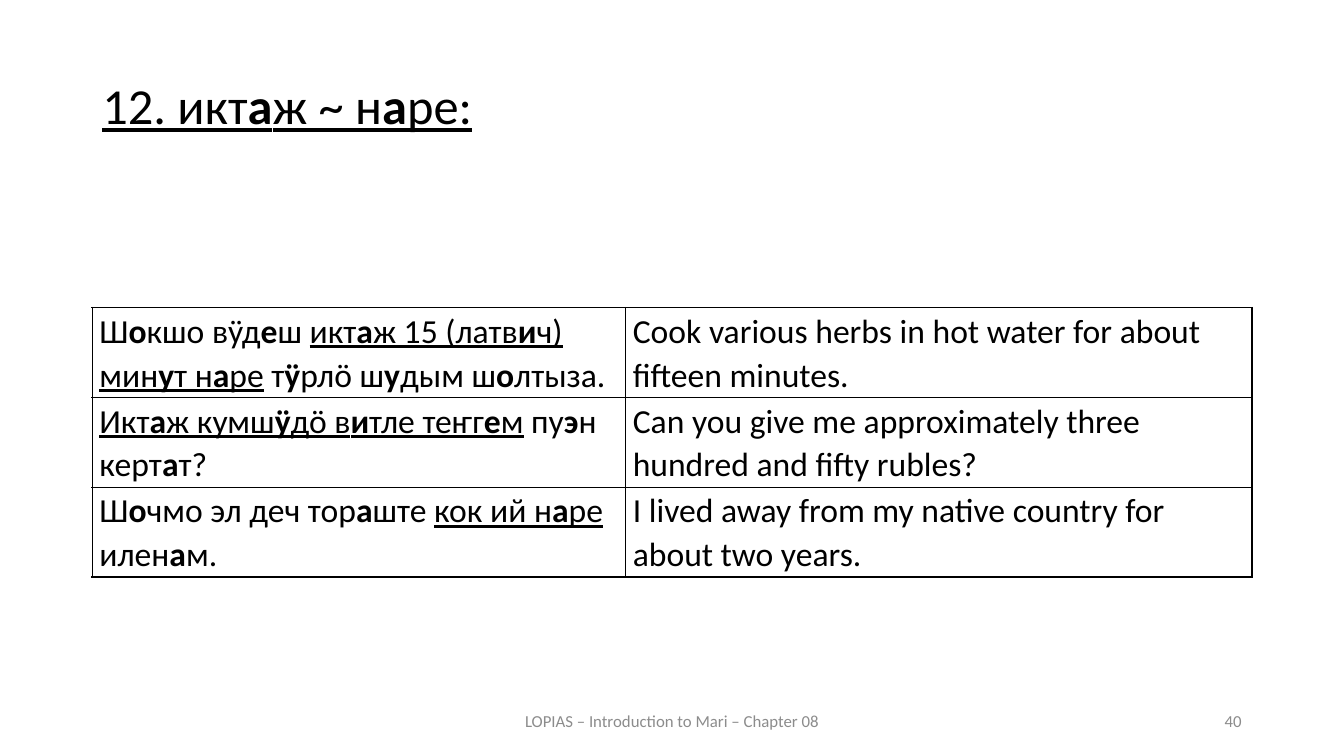
"""Build a slide of Mari example sentences with English translations."""
import pptx
import pptx.dml.color
import pptx.enum.text
import pptx.oxml
import pptx.oxml.ns
import pptx.util

BLACK = pptx.dml.color.RGBColor(0x00, 0x00, 0x00)
GREY = pptx.dml.color.RGBColor(0x8C, 0x8C, 0x8C)
ALIGN = pptx.enum.text.PP_ALIGN
ANCHOR = pptx.enum.text.MSO_ANCHOR

TITLE = "_12. икт*а*ж ~ н*а*ре:_"
FOOTER = "LOPIAS – Introduction to Mari – Chapter 08"
EXAMPLES = [
    ("Ш*о*кшо вӱд*е*ш _икт*а*ж 15 (латв*и*ч) мин*у*т н*а*ре_ т*ӱ*рлӧ ш*у*дым ш*о*лтыза.",
     "Cook various herbs in hot water for about fifteen minutes."),
    ("_Икт*а*ж кумш*ӱ*дӧ в*и*тле теҥг*е*м_ пу*э*н керт*а*т?",
     "Can you give me approximately three hundred and fifty rubles?"),
    ("Ш*о*чмо эл деч тор*а*ште _кок ий н*а*ре_ илен*а*м.",
     "I lived away from my native country for about two years."),
]


def write(tf, text, size, color=BLACK, font="Calibri", align=ALIGN.LEFT,
          spacing=None, before=None):
    """Write text in which * toggles bold and _ toggles underline."""
    p = tf.paragraphs[0]
    p.alignment = align
    if spacing:
        p.line_spacing = spacing
    if before:
        p.space_before = pptx.util.Pt(before)
    for i, underlined in enumerate(text.split("_")):
        for j, part in enumerate(underlined.split("*")):
            if part:
                r = p.add_run()
                r.text = part
                r.font.name = font
                r.font.size = pptx.util.Pt(size)
                r.font.color.rgb = color
                r.font.bold = j % 2 == 1
                r.font.underline = i % 2 == 1


def set_border(cell, side, width, color=BLACK):
    """Draw one side of a table cell."""
    cell._tc.get_or_add_tcPr().append(pptx.oxml.parse_xml(
        f'<a:{side} {pptx.oxml.ns.nsdecls("a")} w="{pptx.util.Pt(width)}">'
        f'<a:solidFill><a:srgbClr val="{color}"/></a:solidFill></a:{side}>'))


class Deck:
    """Hold the presentation, its slide and a grid of 160 columns by 90 rows."""

    def __init__(self):
        """Start a widescreen presentation with one blank slide."""
        self.prs = pptx.Presentation()
        self.prs.slide_width = pptx.util.Inches(13.33)
        self.prs.slide_height = pptx.util.Inches(7.5)
        self.s = self.prs.slides.add_slide(self.prs.slide_layouts[6])

    def x(self, cols):
        """Convert grid columns to a length."""
        return round(self.prs.slide_width * cols / 160)

    def y(self, rows):
        """Convert grid rows to a length."""
        return round(self.prs.slide_height * rows / 90)

    def box(self, col, row, cols, rows):
        """Convert a grid area to left, top, width and height."""
        return self.x(col), self.y(row), self.x(cols), self.y(rows)

    def text(self, area, text, anchor=ANCHOR.MIDDLE, **style):
        """Add a wrapped text box."""
        tf = self.s.shapes.add_textbox(*self.box(*area)).text_frame
        tf.word_wrap = True
        tf.vertical_anchor = anchor
        write(tf, text, **style)

    def table(self, area, widths, rows, **style):
        """Add a plain ruled table."""
        table = self.s.shapes.add_table(
            len(rows), len(widths), *self.box(*area)).table
        table.first_row = table.horz_banding = False
        for column, width in zip(table.columns, widths):
            column.width = self.x(width)
        last = len(widths) - 1
        for i, row in enumerate(rows):
            for j, text in enumerate(row):
                cell = table.cell(i, j)
                cell.margin_left = cell.margin_right = pptx.util.Inches(0.07)
                cell.margin_top = cell.margin_bottom = 0
                cell.vertical_anchor = ANCHOR.MIDDLE
                write(cell.text_frame, text, **style)
                set_border(cell, "lnL", 1.5 if j == 0 else 1)
                set_border(cell, "lnR", 1.5 if j == last else 1)
                set_border(cell, "lnT", 1)
                set_border(cell, "lnB", 1)
                cell.fill.background()


def main():
    """Compose and save the slide."""
    deck = Deck()
    deck.text((11, 9.1, 138, 11.9), TITLE, anchor=ANCHOR.TOP, size=36,
              align=ALIGN.JUSTIFY, spacing=0.9, before=12)
    deck.table((11, 36.6, 138, 32.1), (63.5, 74.5), EXAMPLES,
               size=24, spacing=1.07)
    deck.text((53, 83.4, 54, 4.8), FOOTER, size=12, color=GREY,
              align=ALIGN.CENTER)
    deck.text((113, 83.4, 36, 4.8), "40", size=12, color=GREY,
              align=ALIGN.RIGHT)
    deck.prs.save("out.pptx")


if __name__ == "__main__":
    main()
